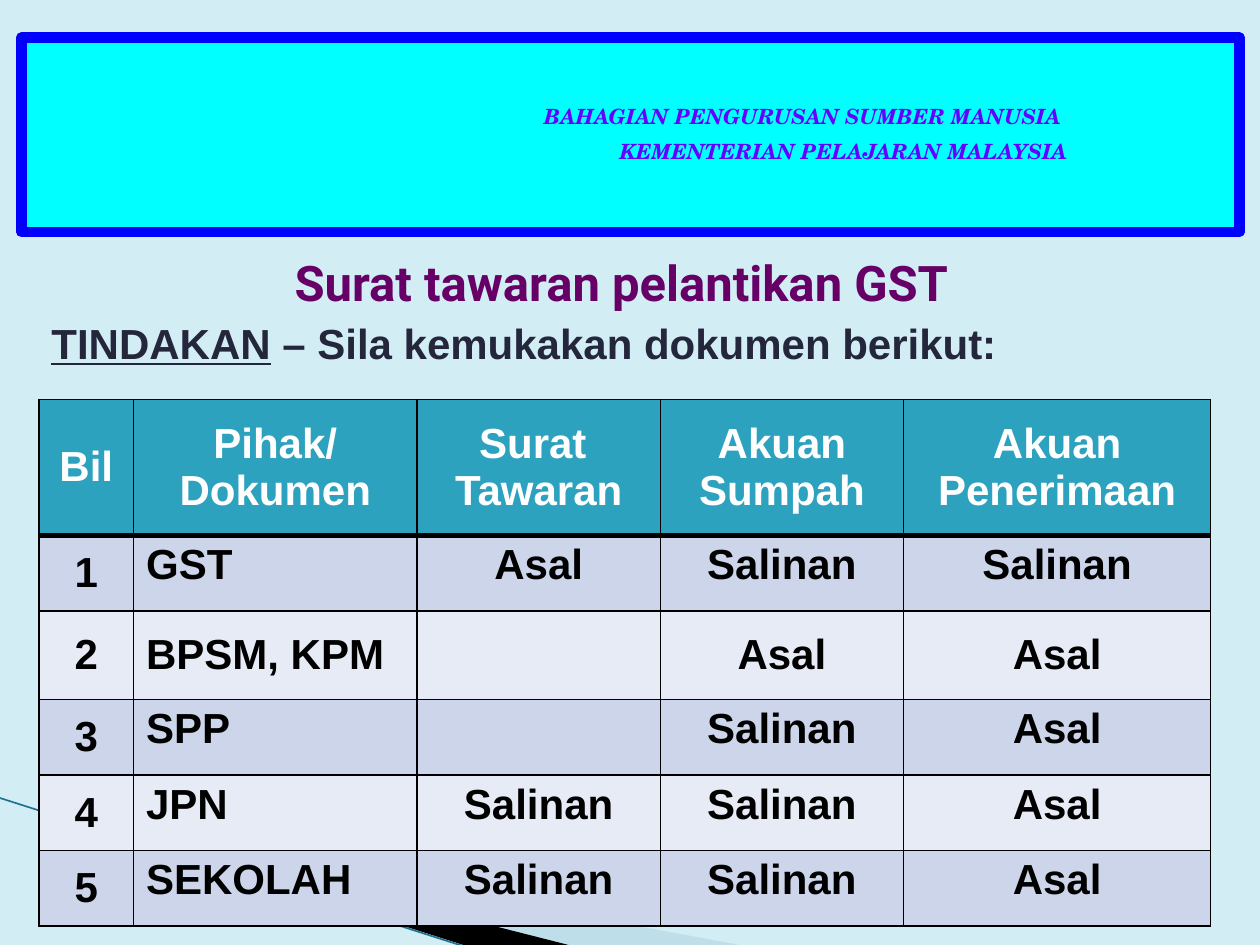
import pptx
import pptx.dml.color
import pptx.enum.shapes
import pptx.enum.text
import pptx.oxml
import pptx.oxml.ns
import pptx.util

Pt = pptx.util.Pt
ALIGN = pptx.enum.text.PP_ALIGN
ANCHOR = pptx.enum.text.MSO_ANCHOR
NS = pptx.oxml.ns.nsdecls("a")

HEADER = ["Bil", "Pihak/ Dokumen", "Surat \nTawaran", "Akuan Sumpah", "Akuan Penerimaan"]
ROWS = [
    ["1", "GST", "Asal", "Salinan", "Salinan"],
    ["2", "BPSM, KPM", "", "Asal", "Asal"],
    ["3", "SPP", "", "Salinan", "Asal"],
    ["4", "JPN", "Salinan", "Salinan", "Asal"],
    ["5", "SEKOLAH", "Salinan", "Salinan", "Asal"],
]
COL_WIDTHS = [54, 162, 139, 139, 175.6]
ROW_HEIGHTS = [77.8, 43.2, 50.4, 43.2, 43.2, 43.2]


def rgb(color):
    return pptx.dml.color.RGBColor.from_string(color)


def set_fill(obj, color):
    obj.fill.solid()
    obj.fill.fore_color.rgb = rgb(color)


def set_font(p, name, size, color, italic=None):
    f = p.font
    f.name, f.size, f.bold, f.italic = name, Pt(size), True, italic
    f.color.rgb = rgb(color)


def add_wedge(s, points, color, alpha=None):
    builder = s.shapes.build_freeform(*points[0], scale=Pt(1))
    builder.add_line_segments(points[1:], close=True)
    sp = builder.convert_to_shape()
    sp.shadow.inherit = False
    set_fill(sp, color)
    sp.line.fill.background()
    if alpha:
        clr = sp.fill._xPr.find(".//" + pptx.oxml.ns.qn("a:srgbClr"))
        clr.append(pptx.oxml.parse_xml(f'<a:alpha {NS} val="{alpha * 1000}"/>'))


def add_line(s, x1, y1, x2, y2, color, width):
    line = s.shapes.add_connector(
        pptx.enum.shapes.MSO_CONNECTOR.STRAIGHT, Pt(x1), Pt(y1), Pt(x2), Pt(y2))
    line.line.color.rgb = rgb(color)
    line.line.width = Pt(width)
    line._element.spPr.append(pptx.oxml.parse_xml(f"<a:effectLst {NS}/>"))


def add_banner(s, x, y, w, h):
    sp = s.shapes.add_shape(
        pptx.enum.shapes.MSO_SHAPE.RECTANGLE, Pt(x), Pt(y), Pt(w), Pt(h))
    sp.shadow.inherit = False
    set_fill(sp, "00FFFF")
    sp.line.color.rgb = rgb("0000FF")
    sp.line.width = Pt(6)


def add_text(s, x, y, w, h):
    tf = s.shapes.add_textbox(Pt(x), Pt(y), Pt(w), Pt(h)).text_frame
    tf.word_wrap = True
    return tf


def set_title(s, text, x, y, w, h):
    sp = s.shapes.title
    sp.left, sp.top, sp.width, sp.height = Pt(x), Pt(y), Pt(w), Pt(h)
    tf = sp.text_frame
    tf.text = text
    tf.vertical_anchor = ANCHOR.TOP
    tf.auto_size = pptx.enum.text.MSO_AUTO_SIZE.NONE
    p = tf.paragraphs[0]
    p.alignment = ALIGN.CENTER
    set_font(p, "Roboto", 28, "660066")


def set_borders(cell, top, bottom):
    tcPr = cell._tc.get_or_add_tcPr()
    for i, (side, width) in enumerate([("L", 1), ("R", 1), ("T", top), ("B", bottom)]):
        tcPr.insert(i, pptx.oxml.parse_xml(
            f'<a:ln{side} {NS} w="{Pt(width)}"><a:solidFill>'
            f'<a:srgbClr val="000000"/></a:solidFill></a:ln{side}>'))


def add_document_table(s, x, y):
    rows = [HEADER] + ROWS
    table = s.shapes.add_table(
        len(rows), len(HEADER), Pt(x), Pt(y),
        Pt(sum(COL_WIDTHS)), Pt(sum(ROW_HEIGHTS))).table
    for column, width in zip(table.columns, COL_WIDTHS):
        column.width = Pt(width)
    for r, texts in enumerate(rows):
        table.rows[r].height = Pt(ROW_HEIGHTS[r])
        for c, text in enumerate(texts):
            cell = table.cell(r, c)
            cell.text = text
            # Header, number column and the taller second row are centred vertically
            middle = r in (0, 2) or c == 0
            cell.vertical_anchor = ANCHOR.MIDDLE if middle else ANCHOR.TOP
            set_fill(cell, "2DA2BF" if r == 0 else ("E7EBF5", "CCD5EA")[r % 2])
            set_borders(cell, 3 if r == 1 else 1, 3 if r == 0 else 1)
            for p in cell.text_frame.paragraphs:
                p.alignment = ALIGN.LEFT if r and c == 1 else ALIGN.CENTER
                set_font(p, "Arial", 24, "000000" if r else "FFFFFF")


def main():
    prs = pptx.Presentation()
    prs.slide_width, prs.slide_height = Pt(720), Pt(540)
    s = prs.slides.add_slide(prs.slide_layouts[5])
    set_fill(s.background, "D2EDF4")

    # Corner decoration
    add_wedge(s, [(39.6, 468.7), (428.4, 540.7), (328.3, 540.7), (39.6, 468)], "A0CBDC", 40)
    add_wedge(s, [(38.2, 467.3), (329, 540.7), (267.8, 541.4), (38.9, 468)], "000000")
    add_line(s, -0.7, 455.8, 267.1, 541.4, "1F7391", 0.95)

    # Banner with the department name
    add_banner(s, 12.2, 21.6, 696.2, 110.9)
    tf = add_text(s, 254.2, 55.4, 362.9, 44.6)
    tf.text = "BAHAGIAN PENGURUSAN SUMBER MANUSIA \nKEMENTERIAN PELAJARAN MALAYSIA"
    for p in tf.paragraphs:
        p.alignment = ALIGN.RIGHT
        set_font(p, "TeX Gyre Schola", 12, "6600FF", italic=True)
    tf.paragraphs[1].space_before = Pt(6)

    # Title and instruction
    set_title(s, "Surat tawaran pelantikan GST", 28.1, 140.4, 653.8, 41)
    p = add_text(s, 22.3, 177.8, 653.8, 36).paragraphs[0]
    r = p.add_run()
    r.text = "TINDAKAN"
    r.font.underline = True
    p.add_run().text = " – Sila kemukakan dokumen berikut:"
    set_font(p, "Arial", 24, "24263C")

    # Required documents
    add_document_table(s, 22.3, 228.2)
    prs.save("out.pptx")


if __name__ == "__main__":
    main()
